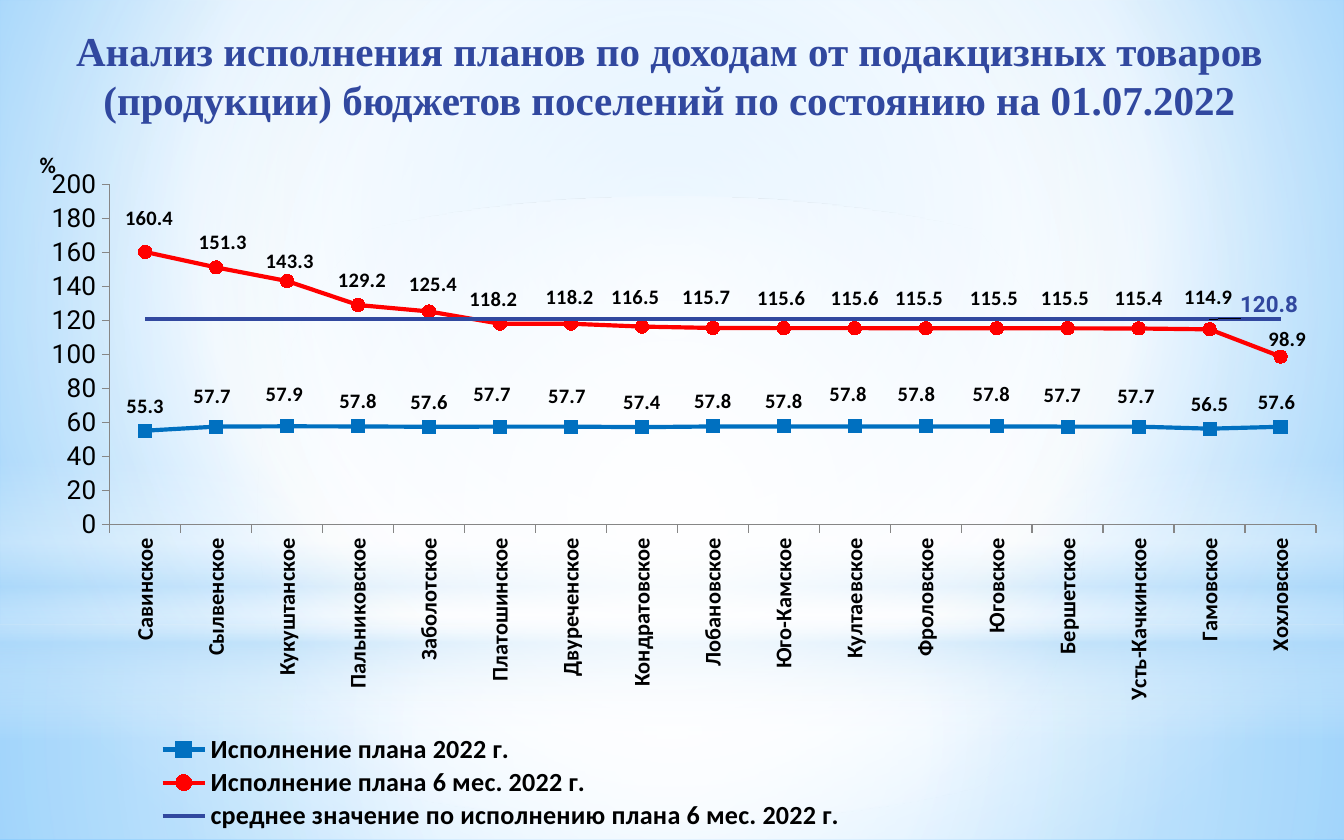
import pptx
import pptx.chart.data
import pptx.dml.color
import pptx.enum.chart
import pptx.enum.shapes
import pptx.enum.text
import pptx.oxml.ns
import pptx.oxml.xmlchemy
import pptx.util
from lxml import etree
from pptx.util import Cm

qn = pptx.oxml.ns.qn

COLORS = {
    "navy": "31489F", "blue": "0070C0", "red": "FF0000", "black": "000000",
    "axis": "868686", "white": "FFFFFF", "mist": "B4DCFA",
    "sky": "9ED5FF", "deep_sky": "5BB9FF",
}

TITLE = ("Анализ исполнения планов по доходам от подакцизных товаров "
         "(продукции) бюджетов поселений по состоянию на 01.07.2022")
SETTLEMENTS = [
    "Савинское", "Сылвенское", "Кукуштанское", "Пальниковское", "Заболотское",
    "Платошинское", "Двуреченское", "Кондратовское", "Лобановское",
    "Юго-Камское", "Култаевское", "Фроловское", "Юговское", "Бершетское",
    "Усть-Качкинское", "Гамовское", "Хохловское"]
YEAR_PLAN = [55.3, 57.7, 57.9, 57.8, 57.6, 57.7, 57.7, 57.4, 57.8, 57.8,
             57.8, 57.8, 57.8, 57.7, 57.7, 56.5, 57.6]
HALF_YEAR_PLAN = [160.4, 151.3, 143.3, 129.2, 125.4, 118.2, 118.2, 116.5, 115.7,
                  115.6, 115.6, 115.5, 115.5, 115.5, 115.4, 114.9, 98.9]
AVERAGE = 120.8

# Label shifts by point, in thousandths of the chart's width and height
YEAR_SHIFTS = {1: (-3, -8), 2: (-2, -10), 5: (-6, -11), 6: (-3, -8),
               10: (-5, -11), 11: (-7, -11), 12: (-4, -11), 13: (-4, -10),
               14: (-2, -8), 16: (-3, 0)}
HALF_YEAR_SHIFTS = {0: (3, -13), 1: (5, -1), 2: (2, 7), 3: (3, 0), 4: (3, -4),
                    5: (-5, 0), 6: (-1, -3), 7: (-5, -7), 8: (-5, -8),
                    9: (-2, -8), 10: (0, -8), 11: (-5, -8), 12: (-2, -8),
                    13: (-2, -8), 14: (0, -8), 15: (-1, -11), 16: (5, 10)}
AVERAGE_SHIFTS = {15: (45, 6)}


def rgb(name):
    return pptx.dml.color.RGBColor.from_string(COLORS[name])


def style_font(font, size, name="Calibri", bold=True, color="black"):
    font.size = pptx.util.Pt(size)
    font.name = name
    font.bold = bold
    font.color.rgb = rgb(color)


def set_gradient(fill, element, stops, focus=None):
    """Stops are (position, colour, opacity); no focus means top to bottom."""
    fill.solid()
    gradient = pptx.oxml.xmlchemy.OxmlElement("a:gradFill")
    stop_list = etree.SubElement(gradient, qn("a:gsLst"))
    for position, color, opacity in stops:
        stop = etree.SubElement(stop_list, qn("a:gs"), pos=str(position * 1000))
        tint = etree.SubElement(stop, qn("a:srgbClr"), val=COLORS[color])
        if opacity < 100:
            etree.SubElement(tint, qn("a:alpha"), val=str(opacity * 1000))
    if focus:
        circle = etree.SubElement(gradient, qn("a:path"))
        circle.set("path", "circle")
        rectangle = etree.SubElement(circle, qn("a:fillToRect"))
        for side, percent in zip("ltrb", focus):
            rectangle.set(side, str(percent * 1000))
    else:
        etree.SubElement(gradient, qn("a:lin"), ang="5400000", scaled="0")
    solid = element.find(".//" + qn("a:solidFill"))
    solid.getparent().replace(solid, gradient)


def add_glow(slide, kind, top, height, stops, focus=None):
    shape = slide.shapes.add_shape(kind, 0, Cm(top), Cm(25.4), Cm(height))
    shape.shadow.inherit = False
    shape.line.fill.background()
    set_gradient(shape.fill, shape.element, stops, focus)


def add_backdrop(slide):
    background = slide.background
    set_gradient(background.fill, slide.element.find(".//" + qn("p:bg")),
                 [(0, "sky", 100), (60, "white", 100), (100, "deep_sky", 100)],
                 (20, 10, 20, 60))
    rectangle = pptx.enum.shapes.MSO_SHAPE.RECTANGLE
    oval = pptx.enum.shapes.MSO_SHAPE.OVAL
    center = (50, 50, 50, 50)
    add_glow(slide, rectangle, 11.81, 4.06,
             [(0, "white", 91), (37, "white", 76), (100, "mist", 79)], center)
    add_glow(slide, rectangle, 0, 11.81,
             [(0, "white", 89), (48, "white", 62), (100, "mist", 79)], center)
    add_glow(slide, rectangle, 8.71, 5.28,
             [(0, "white", 0), (29, "white", 30), (45, "mist", 40),
              (55, "white", 26), (65, "mist", 60), (100, "white", 0)])
    add_glow(slide, oval, 3.71, 11.81,
             [(0, "white", 100), (56, "white", 0)], center)


def add_title(slide):
    box = slide.shapes.add_textbox(0, Cm(0.35), Cm(25.3), Cm(1.32))
    box.text_frame.word_wrap = True
    paragraph = box.text_frame.paragraphs[0]
    paragraph.alignment = pptx.enum.text.PP_ALIGN.CENTER
    run = paragraph.add_run()
    run.text = TITLE
    style_font(run.font, 22, "Times New Roman", color="navy")


def make_layout(inner=False, edge=True, **values):
    layout = pptx.oxml.xmlchemy.OxmlElement("c:layout")
    manual = etree.SubElement(layout, qn("c:manualLayout"))
    if inner:
        etree.SubElement(manual, qn("c:layoutTarget"), val="inner")
    if edge:
        for mode in ("xMode", "yMode"):
            etree.SubElement(manual, qn("c:" + mode), val="edge")
    for key, value in values.items():
        etree.SubElement(manual, qn("c:" + key), val=str(value))
    return layout


def place_after(parent, predecessor, layout):
    for old in parent.findall(qn("c:layout")):
        parent.remove(old)
    if predecessor:
        parent.find(qn(predecessor)).addnext(layout)
    else:
        parent.insert(0, layout)


def style_series(series, color, marker, shifts, size, font, label_all):
    above = pptx.enum.chart.XL_LABEL_POSITION.ABOVE
    series.smooth = False
    series.format.line.color.rgb = rgb(color)
    series.format.line.width = pptx.util.Pt(2.25)
    series.marker.style = marker
    if marker != pptx.enum.chart.XL_MARKER_STYLE.NONE:
        series.marker.size = 7
        series.marker.format.fill.solid()
        series.marker.format.fill.fore_color.rgb = rgb(color)
        series.marker.format.line.color.rgb = rgb(color)
    label_color = "black" if label_all else color
    labels = series.data_labels
    labels.show_value = label_all
    labels.number_format = "#,##0.0"
    labels.number_format_is_linked = False
    labels.position = above
    style_font(labels.font, size, font, color=label_color)
    for index in shifts:
        label = series.points[index].data_label
        style_font(label.font, size, font, color=label_color)
        label.position = above
    for label in series.data_labels._element.findall(qn("c:dLbl")):
        x, y = shifts[int(label.find(qn("c:idx")).get("val"))]
        place_after(label, "c:idx", make_layout(edge=False, x=x / 1000, y=y / 1000))


def style_axes(chart):
    outside = pptx.enum.chart.XL_TICK_MARK.OUTSIDE
    for axis in (chart.category_axis, chart.value_axis):
        axis.has_major_gridlines = False
        axis.major_tick_mark = outside
        axis.format.line.color.rgb = rgb("axis")
    style_font(chart.category_axis.tick_labels.font, 12)
    body = chart.element.find(".//" + qn("c:catAx")).find(".//" + qn("a:bodyPr"))
    body.set("rot", "-5400000")
    body.set("vert", "horz")

    axis = chart.value_axis
    axis.minimum_scale, axis.maximum_scale, axis.major_unit = 0, 200, 20
    axis.tick_labels.number_format = "#,##0"
    axis.tick_labels.number_format_is_linked = False
    style_font(axis.tick_labels.font, 14, "Roboto", bold=False)
    run = axis.axis_title.text_frame.paragraphs[0].add_run()
    run.text = "%"
    style_font(run.font, 12)
    title = chart.element.find(".//" + qn("c:valAx")).find(qn("c:title"))
    title.find(".//" + qn("a:bodyPr")).set("rot", "0")
    place_after(title, "c:tx", make_layout(x=0.015, y=0.03))


def add_plan_chart(slide):
    data = pptx.chart.data.CategoryChartData()
    data.categories = SETTLEMENTS
    data.add_series("Исполнение плана 2022 г.", YEAR_PLAN)
    data.add_series("Исполнение плана 6 мес. 2022 г.", HALF_YEAR_PLAN)
    data.add_series("среднее значение по исполнению плана 6 мес. 2022 г.",
                    [AVERAGE] * len(SETTLEMENTS))
    chart = slide.shapes.add_chart(
        pptx.enum.chart.XL_CHART_TYPE.LINE_MARKERS,
        Cm(0.3), Cm(2.34), Cm(25), Cm(13.54), data).chart
    chart.has_title = False
    style_font(chart.font, 18, "Roboto", bold=False)
    chart.plots[0].vary_by_categories = False

    # Lines and their labels
    markers = pptx.enum.chart.XL_MARKER_STYLE
    year, half_year, average = chart.plots[0].series
    style_series(year, "blue", markers.SQUARE, YEAR_SHIFTS, 11, "Calibri", True)
    style_series(half_year, "red", markers.CIRCLE, HALF_YEAR_SHIFTS, 11, "Calibri", True)
    style_series(average, "navy", markers.NONE, AVERAGE_SHIFTS, 12, "Roboto", False)

    # Axes, plot area and legend
    style_axes(chart)
    place_after(chart.element.find(".//" + qn("c:plotArea")), None,
                make_layout(inner=True, x=0.071, y=0.085, w=0.912, h=0.475))
    chart.has_legend = True
    chart.legend.position = pptx.enum.chart.XL_LEGEND_POSITION.BOTTOM
    chart.legend.include_in_layout = False
    style_font(chart.legend.font, 14)
    place_after(chart.element.find(".//" + qn("c:legend")), "c:legendPos",
                make_layout(x=0.067, y=0.85, w=0.6, h=0.14))


def main():
    presentation = pptx.Presentation()
    presentation.slide_width, presentation.slide_height = Cm(25.4), Cm(15.88)
    slide = presentation.slides.add_slide(presentation.slide_layouts[6])
    add_backdrop(slide)
    add_title(slide)
    add_plan_chart(slide)
    presentation.save("out.pptx")


if __name__ == "__main__":
    main()
